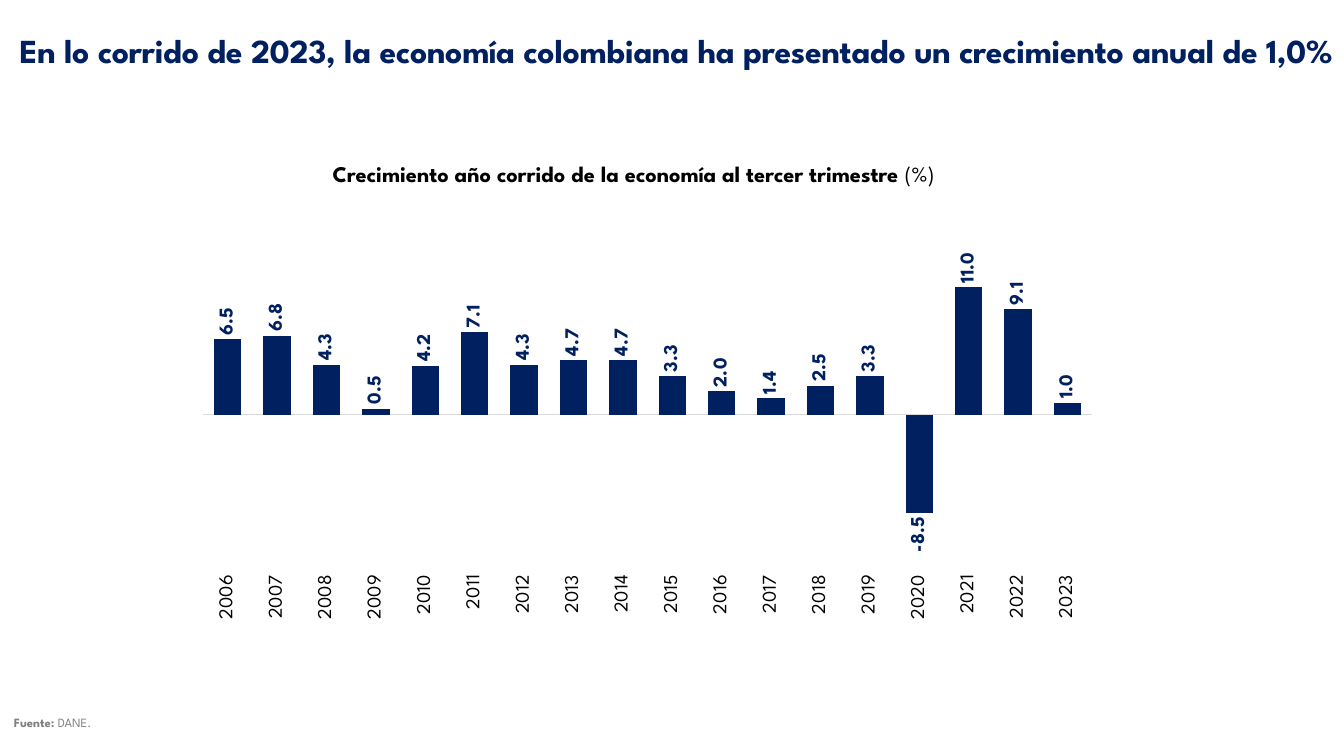
from dataclasses import dataclass

from lxml import etree
from pptx import Presentation
from pptx.chart.data import CategoryChartData
from pptx.dml.color import RGBColor
from pptx.enum.chart import XL_CHART_TYPE, XL_LABEL_POSITION, XL_TICK_LABEL_POSITION, XL_TICK_MARK
from pptx.enum.text import MSO_AUTO_SIZE, PP_ALIGN
from pptx.oxml import parse_xml
from pptx.oxml.ns import nsdecls, qn
from pptx.util import Pt

COLUMNS = XL_CHART_TYPE.COLUMN_CLUSTERED
OUTSIDE_END = XL_LABEL_POSITION.OUTSIDE_END
LABELS_LOW = XL_TICK_LABEL_POSITION.LOW
NO_TICKS = XL_TICK_MARK.NONE
GROW = MSO_AUTO_SIZE.SHAPE_TO_FIT_TEXT
LEFT = PP_ALIGN.LEFT
CENTER = PP_ALIGN.CENTER


@dataclass(frozen=True)
class Theme:
    font: str = "League Spartan"
    navy: RGBColor = RGBColor(0x00, 0x20, 0x60)
    black: RGBColor = RGBColor(0x00, 0x00, 0x00)
    gray: RGBColor = RGBColor(0x80, 0x80, 0x80)
    axis: RGBColor = RGBColor(0xD9, 0xD9, 0xD9)
    headline: int = 24
    subtitle: int = 16
    values: int = 14
    source: int = 9


THEME = Theme()
FIRST_YEAR = 2006
GROWTH = [6.5, 6.8, 4.3, 0.5, 4.2, 7.1, 4.3, 4.7, 4.7,
          3.3, 2.0, 1.4, 2.5, 3.3, -8.5, 11.0, 9.1, 1.0]
PLOT_AREA = {"x": 0.02, "y": 0.08, "w": 0.96, "h": 0.77}


def style_font(font, size, color, bold=False):
    font.name = THEME.font
    font.size = Pt(size)
    font.bold = bold
    font.color.rgb = color


def add_text(slide, box, runs, *, size, color, align=LEFT, inset=7.2,
             line_spacing=None, tracking=None):
    frame = slide.shapes.add_textbox(*map(Pt, box)).text_frame
    frame.word_wrap = True
    frame.auto_size = GROW
    frame.margin_left = frame.margin_right = Pt(inset)
    paragraph = frame.paragraphs[0]
    paragraph.alignment = align
    if line_spacing:
        paragraph.line_spacing = line_spacing
    for words, bold in runs:
        run = paragraph.add_run()
        run.text = words
        style_font(run.font, size, color, bold)
        if tracking:
            run.font._element.set("spc", str(round(tracking * 100)))


def turn_upward(text_properties):
    body = text_properties.find(qn("a:bodyPr"))
    body.set("rot", "-5400000")
    body.set("vert", "horz")


def place_plot(chart):
    plot_area = chart._chartSpace.chart.plotArea
    for old_layout in plot_area.findall(qn("c:layout")):
        plot_area.remove(old_layout)
    layout = parse_xml(f"<c:layout {nsdecls('c')}><c:manualLayout/></c:layout>")
    settings = {"layoutTarget": "inner", "xMode": "edge", "yMode": "edge", **PLOT_AREA}
    for tag, value in settings.items():
        etree.SubElement(layout[0], qn(f"c:{tag}")).set("val", str(value))
    plot_area.insert(0, layout)


def add_growth_chart(slide, box):
    growth = CategoryChartData(number_format="0.0")
    growth.categories = [str(FIRST_YEAR + i) for i in range(len(GROWTH))]
    growth.add_series("Series 1", GROWTH)
    chart = slide.shapes.add_chart(COLUMNS, *map(Pt, box), growth).chart
    chart.has_title = False
    chart.has_legend = False
    style_font(chart.font, THEME.values, THEME.black)

    years = chart.category_axis
    years.tick_label_position = LABELS_LOW
    years.major_tick_mark = years.minor_tick_mark = NO_TICKS
    years.format.line.color.rgb = THEME.axis
    years.format.line.width = Pt(0.75)
    style_font(years.tick_labels.font, THEME.values, THEME.black)
    turn_upward(years._element.find(qn("c:txPr")))

    percent = chart.value_axis
    percent.visible = False
    percent.has_major_gridlines = False
    percent.minimum_scale = -13
    percent.maximum_scale = 15

    plot = chart.plots[0]
    plot.gap_width = 80
    plot.overlap = -27
    plot.vary_by_categories = False
    bars = plot.series[0]
    bars.invert_if_negative = False
    bars.format.fill.solid()
    bars.format.fill.fore_color.rgb = THEME.navy
    labels = bars.data_labels
    labels.show_value = True
    labels.position = OUTSIDE_END
    labels.number_format = "0.0"
    labels.number_format_is_linked = False
    style_font(labels.font, THEME.values, THEME.navy, bold=True)
    turn_upward(labels._element.find(qn("c:txPr")))
    place_plot(chart)


def add_headline(slide, box):
    headline = ("En lo corrido de 2023, la economía colombiana ha presentado "
                "un crecimiento anual de 1,0%")
    add_text(slide, box, [(headline, True)], size=THEME.headline, color=THEME.navy,
             align=CENTER, inset=0, line_spacing=0.9, tracking=-0.2)


def add_growth_panel(slide, box):
    left, top, width, height = box
    subtitle = [("Crecimiento año corrido de la economía al tercer trimestre ", True),
                ("(%)", False)]
    add_text(slide, (left + 23.8, top, 594, 26.6), subtitle,
             size=THEME.subtitle, color=THEME.black, align=CENTER)
    chart_offset = 37.4
    add_growth_chart(slide, (left, top + chart_offset, width, height - chart_offset))


def add_source(slide, box):
    add_text(slide, box, [("Fuente: ", True), ("DANE.", False)],
             size=THEME.source, color=THEME.gray)


def main():
    deck = Presentation()
    deck.slide_width, deck.slide_height = Pt(960), Pt(540)
    slide = deck.slides.add_slide(deck.slide_layouts[6])
    add_headline(slide, (5.8, 20.9, 954, 59.8))
    add_growth_panel(slide, (131.8, 110.9, 661.7, 337.6))
    add_source(slide, (2.9, 506.9, 954, 18))
    deck.save("out.pptx")


if __name__ == "__main__":
    main()
